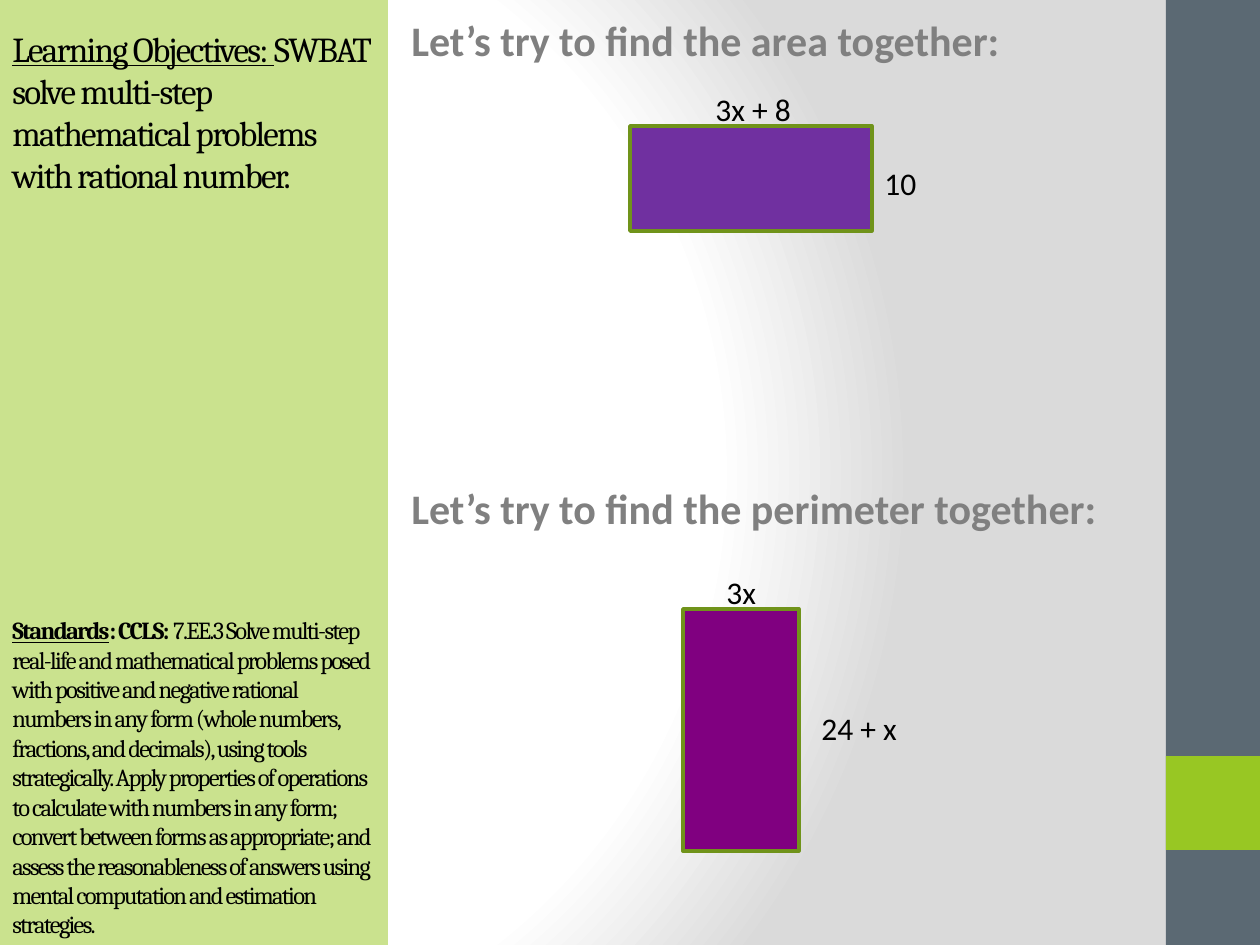
from dataclasses import dataclass

from pptx import Presentation
from pptx.dml.color import RGBColor
from pptx.enum.shapes import MSO_SHAPE as Shape
from pptx.enum.text import MSO_ANCHOR as Anchor, PP_ALIGN as Align
from pptx.oxml import parse_xml
from pptx.oxml.ns import nsdecls, qn
from pptx.util import Emu, Pt

WIDTH, HEIGHT = 1260, 945
PX = 914400 / 126


@dataclass(frozen=True)
class Theme:
    slate: str = "5B6973"
    lime: str = "98C723"
    outline: str = "70931A"
    violet: str = "7030A0"
    purple: str = "800080"
    ink: str = "000000"
    gray: str = "808080"
    paper: str = "FFFFFF"
    paper_edge: str = "DADADA"
    serif: str = "Cambria"
    sans: str = "Calibri"
    heading: int = 24
    objective: int = 20
    label: int = 18
    standard: int = 14


def px(*lengths):
    return [Emu(round(length * PX)) for length in lengths]


class SlideBuilder:
    def __init__(self, slide, theme):
        self.slide = slide
        self.theme = theme

    def background(self):
        """Fill the slide with a radial gradient centred left of the middle."""
        stops = ((0, self.theme.paper), (75, self.theme.paper), (100, self.theme.paper_edge))
        stop_xml = "".join(
            f'<a:gs pos="{position * 1000}"><a:srgbClr val="{color}"/></a:gs>'
            for position, color in stops
        )
        background = parse_xml(
            f'<p:bg {nsdecls("p", "a")}><p:bgPr><a:gradFill rotWithShape="1">'
            f'<a:gsLst>{stop_xml}</a:gsLst><a:path path="circle">'
            '<a:fillToRect l="20000" t="50000" r="100000" b="50000"/></a:path>'
            '</a:gradFill><a:effectLst/></p:bgPr></p:bg>'
        )
        self.slide.element.cSld.insert(0, background)

    def rectangle(self, box, fill, outline=None, opacity=None):
        shape = self.slide.shapes.add_shape(Shape.RECTANGLE, *px(*box))
        shape.shadow.inherit = False
        shape.fill.solid()
        shape.fill.fore_color.rgb = RGBColor.from_string(fill)
        if opacity:
            color = shape.fill._xPr.find(qn("a:solidFill"))[0]
            color.append(parse_xml(f'<a:alpha {nsdecls("a")} val="{opacity * 1000}"/>'))
        if outline:
            shape.line.color.rgb = RGBColor.from_string(outline)
            shape.line.width = Pt(2)
        else:
            shape.line.fill.background()
        return shape

    def text_box(self, box, lines, size, color, bold=False, gap=0):
        """Write one paragraph per line, with gap points between them."""
        text_frame = self.slide.shapes.add_textbox(*px(*box)).text_frame
        text_frame.word_wrap = True
        text_frame.text = "\n".join(lines)
        for index, paragraph in enumerate(text_frame.paragraphs):
            paragraph.space_before = Pt(gap if index else 0)
            self.style(paragraph.runs[0], self.theme.sans, size, color, bold)

    def label(self, left, top, width, text):
        self.text_box((left, top, width, 50), [text], self.theme.label, self.theme.ink)

    def panel(self, box, paragraphs):
        """Tinted panel; paragraphs hold (size, space before, [(text, bold, underline)])."""
        shape = self.rectangle(box, self.theme.lime, opacity=51)
        text_frame = shape.text_frame
        text_frame.word_wrap = True
        text_frame.vertical_anchor = Anchor.BOTTOM
        for index, (size, gap, pieces) in enumerate(paragraphs):
            paragraph = text_frame.add_paragraph() if index else text_frame.paragraphs[0]
            paragraph.alignment = Align.LEFT
            paragraph.line_spacing = Pt(size * 1.2)
            paragraph.space_before = Pt(gap)
            for text, bold, underline in pieces:
                for number, line in enumerate(text.split("\n")):
                    if number:
                        paragraph.add_line_break()
                    run = paragraph.add_run()
                    run.text = line
                    self.style(run, self.theme.serif, size, self.theme.ink, bold)
                    run.font.underline = underline
                    run.font._element.set("spc", "-100")

    @staticmethod
    def style(run, font, size, color, bold):
        run.font.name = font
        run.font.size = Pt(size)
        run.font.bold = bold
        run.font.color.rgb = RGBColor.from_string(color)


def main():
    presentation = Presentation()
    presentation.slide_width, presentation.slide_height = px(WIDTH, HEIGHT)
    theme = Theme()
    builder = SlideBuilder(presentation.slides.add_slide(presentation.slide_layouts[6]), theme)

    builder.background()
    builder.rectangle((1166, 0, 94, HEIGHT), theme.slate)
    builder.rectangle((1166, 756, 94, 94), theme.lime)

    objective = [
        ("Learning Objectives: ", False, True),
        ("SWBAT solve multi-step mathematical problems with rational number.", False, False),
    ]
    standard = [
        ("Standards", True, True),
        (": CCLS:", True, False),
        (" 7.EE.3 Solve multi-step real-life and mathematical problems posed with "
         "positive and negative rational numbers in any form (whole numbers,\n"
         "fractions, and decimals), using tools strategically. Apply properties of "
         "operations to calculate with numbers in any form; convert between forms as "
         "appropriate; and assess the reasonableness of answers using\n"
         "mental computation and estimation strategies.", False, False),
    ]
    builder.panel((0, 0, 388, HEIGHT), [
        (theme.objective, 0, objective),
        (theme.standard, 240, standard),
    ])

    headings = [f"Let’s try to find the {measure} together:" for measure in ("area", "perimeter")]
    builder.text_box((399, 8, 777, 942), headings, theme.heading, theme.gray, bold=True, gap=239)

    builder.rectangle((630, 126, 242, 105), theme.violet, theme.outline)
    builder.label(703, 84, 136, "3x + 8")
    builder.label(872, 158, 74, "10")

    builder.rectangle((683, 609, 116, 242), theme.purple, theme.outline)
    builder.label(714, 567, 84, "3x")
    builder.label(809, 703, 199, "24 + x")

    presentation.save("out.pptx")


if __name__ == "__main__":
    main()
